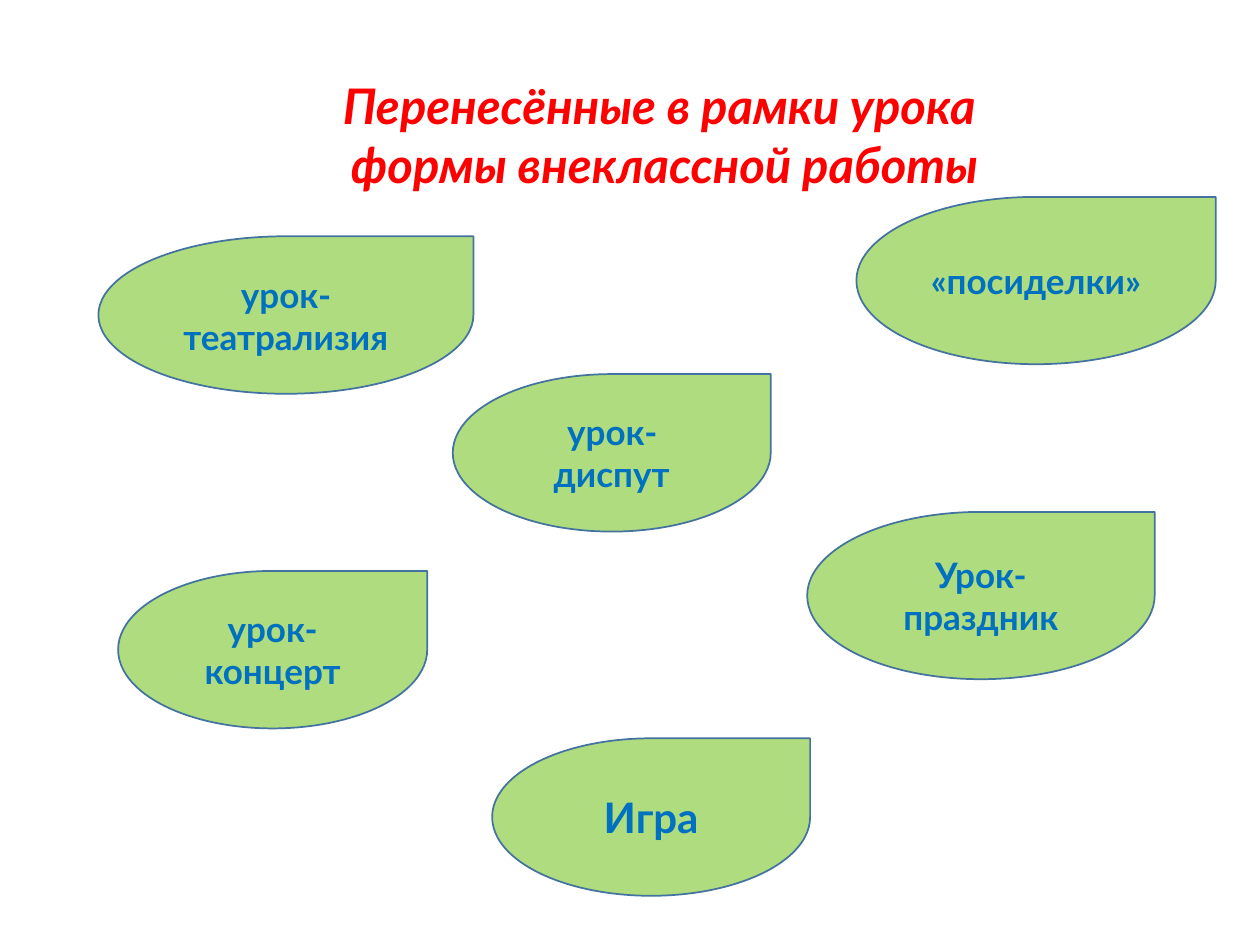
from typing import NamedTuple

from lxml.etree import SubElement
from pptx import Presentation
from pptx.dml.color import RGBColor
from pptx.enum.shapes import MSO_SHAPE as Preset
from pptx.enum.text import MSO_ANCHOR as Anchor, MSO_AUTO_SIZE as AutoSize, PP_ALIGN as Align
from pptx.oxml.ns import qn
from pptx.slide import Slide
from pptx.util import Inches, Pt

RED = RGBColor(0xFF, 0x00, 0x00)
BLUE = RGBColor(0x00, 0x70, 0xC0)
LEAF_GREEN = RGBColor(0x92, 0xD0, 0x50)
OUTLINE_BLUE = RGBColor(0x43, 0x73, 0x9E)

SLIDE_WIDTH, SLIDE_HEIGHT = Inches(10), Inches(7.5)
CELL = SLIDE_WIDTH / 64
LEAF_OPACITY = 73

HEADING_FONT = {"name": "Lato", "size": Pt(28), "bold": True, "italic": True}
LEAF_FONT = {"name": "Lato", "bold": True}


class Area(NamedTuple):
    column: float
    row: float
    columns: float
    rows: float


class Leaf(NamedTuple):
    label: str
    area: Area
    points: int = 20


HEADING = ("Перенесённые в рамки урока ", "формы внеклассной работы")
HEADING_AREA = Area(7, 3.5, 53.5, 6.65)
LEAVES = (
    Leaf("урок-театрализия", Area(5, 12, 19.05, 8)),
    Leaf("урок-диспут", Area(23, 19, 16.15, 8)),
    Leaf("урок-концерт", Area(6, 29, 15.7, 8)),
    Leaf("Урок-праздник", Area(41, 26, 17.65, 8.5)),
    Leaf("«посиделки»", Area(43.5, 10, 18.25, 8.5)),
    Leaf("Игра", Area(25, 37.5, 16.15, 8), 24),
)


def to_lengths(area: Area) -> list[int]:
    return [round(cells * CELL) for cells in area]


def format_font(font, values: dict, color: RGBColor) -> None:
    for attribute, value in values.items():
        setattr(font, attribute, value)
    font.color.rgb = color


def place_heading(slide: Slide) -> None:
    heading = slide.shapes.title
    heading.left, heading.top, heading.width, heading.height = to_lengths(HEADING_AREA)
    frame = heading.text_frame
    frame.text = "\n".join(HEADING)
    frame.word_wrap = True
    frame.auto_size = AutoSize.SHAPE_TO_FIT_TEXT
    frame.vertical_anchor = Anchor.TOP
    for line in frame.paragraphs:
        line.alignment = Align.CENTER
        line.line_spacing = 1.0
        format_font(line.runs[0].font, HEADING_FONT, RED)


def draw_leaf(slide: Slide, leaf: Leaf) -> None:
    teardrop = slide.shapes.add_shape(Preset.TEAR, *to_lengths(leaf.area))
    teardrop.shadow.inherit = False
    teardrop.fill.solid()
    teardrop.fill.fore_color.rgb = LEAF_GREEN
    green = teardrop.fill._xPr.find(qn("a:solidFill"))[0]
    SubElement(green, qn("a:alpha"), val=str(LEAF_OPACITY * 1000))
    teardrop.line.color.rgb = OUTLINE_BLUE
    teardrop.line.width = Pt(1)
    frame = teardrop.text_frame
    frame.text = leaf.label
    frame.word_wrap = True
    frame.vertical_anchor = Anchor.MIDDLE
    label = frame.paragraphs[0]
    label.alignment = Align.CENTER
    format_font(label.runs[0].font, LEAF_FONT | {"size": Pt(leaf.points)}, BLUE)


def main() -> None:
    deck = Presentation()
    deck.slide_width, deck.slide_height = SLIDE_WIDTH, SLIDE_HEIGHT
    slide = deck.slides.add_slide(deck.slide_layouts.get_by_name("Title Only"))
    place_heading(slide)
    for leaf in LEAVES:
        draw_leaf(slide, leaf)
    deck.save("out.pptx")


if __name__ == "__main__":
    main()
